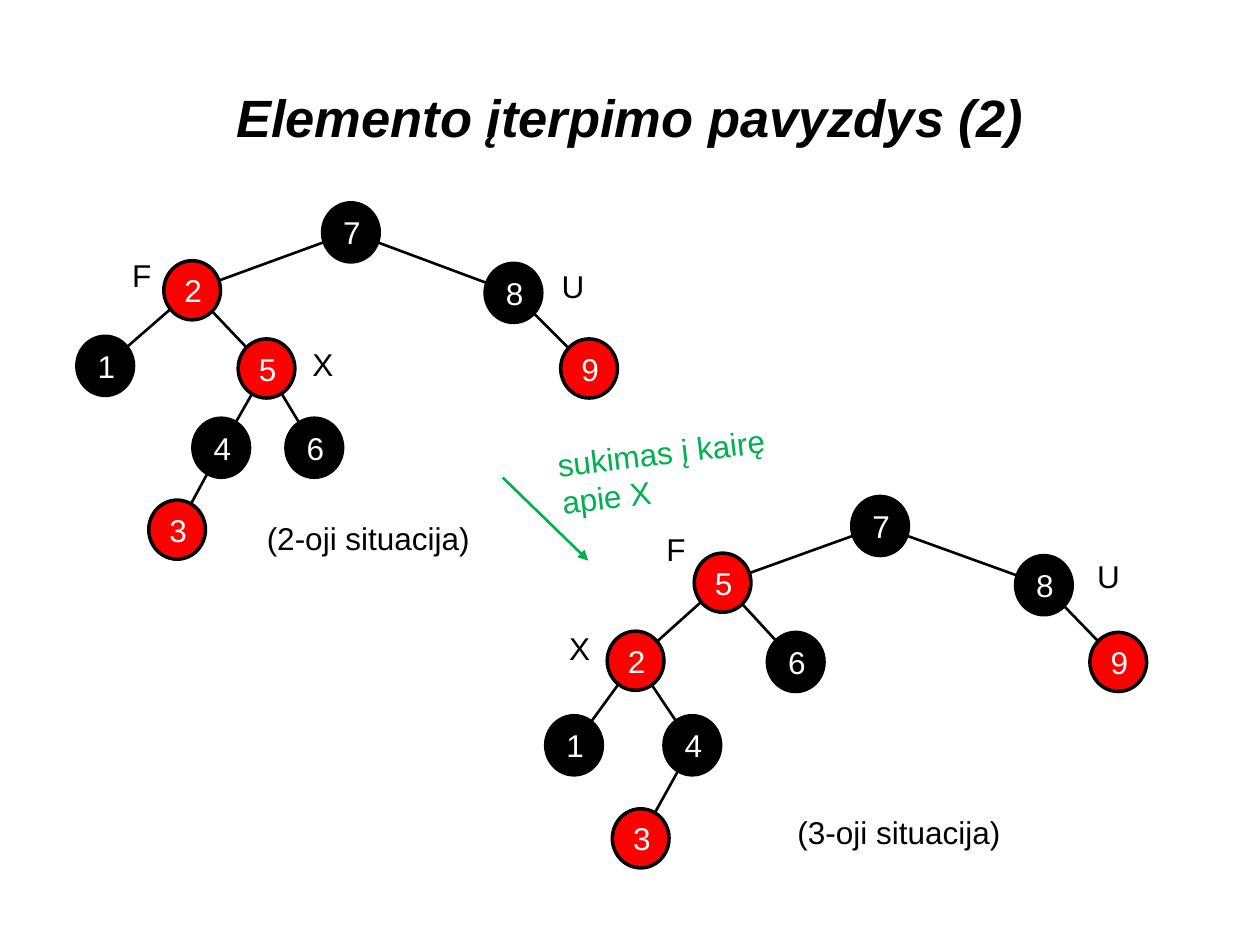
import pptx
import pptx.dml.color
import pptx.enum.shapes
import pptx.enum.text
import pptx.oxml.ns
import pptx.util
from lxml import etree

Pt = pptx.util.Pt
COLORS = {"black": "000000", "red": "FF0000", "white": "FFFFFF", "green": "00B050"}
NODE_WIDTH, NODE_HEIGHT = 32.4, 33.8
TEXT_FORMAT = {"name": "Arial", "size": Pt(18)}
TITLE_FORMAT = {"name": "Arial", "size": Pt(30), "bold": True, "italic": True}
CENTER = pptx.enum.text.PP_ALIGN.CENTER
MIDDLE = pptx.enum.text.MSO_ANCHOR.MIDDLE

BEFORE_NODES = {
    7: (184.3, 115.9, "black"), 2: (93.6, 149, "red"), 8: (277.2, 150.5, "black"),
    1: (43.9, 192.2, "black"), 5: (136.1, 193.7, "red"), 9: (320.4, 193.7, "red"),
    4: (110.2, 239, "black"), 6: (163.4, 239, "black"), 3: (85, 285.8, "red"),
}
BEFORE_EDGES = [(7, 2), (7, 8), (2, 1), (2, 5), (8, 9), (5, 4), (5, 6), (4, 3)]
AFTER_NODES = {
    7: (486.7, 283.7, "black"), 5: (396.7, 316.1, "red"), 8: (580.3, 317.5, "black"),
    2: (347, 360.7, "red"), 6: (438.5, 361.4, "black"), 9: (622.8, 361.4, "red"),
    1: (311.8, 409, "black"), 4: (379.4, 409, "black"), 3: (349.9, 462.2, "red"),
}
AFTER_EDGES = [(7, 5), (7, 8), (5, 2), (5, 6), (8, 9), (2, 1), (2, 4), (4, 3)]
LABELS = [
    ("F", 68.4, 142.6, 26.6), ("U", 313.9, 149, 27.4), ("X", 171.4, 193.7, 26.6),
    ("(2-oji situacija)", 145.4, 293, 131.8),
    ("F", 373.7, 299.5, 26.6), ("U", 619.9, 314.6, 27.4), ("X", 318.2, 355.7, 26.6),
    ("(3-oji situacija)", 448.6, 460.8, 131.8),
]


def rgb(color):
    return pptx.dml.color.RGBColor.from_string(COLORS[color])


def format_text(paragraph, values, color):
    for name, value in values.items():
        setattr(paragraph.font, name, value)
    paragraph.font.color.rgb = rgb(color)


def add_title(slide, text):
    title = slide.shapes.title
    title.left, title.top, title.width, title.height = Pt(36), Pt(21.6), Pt(648), Pt(90)
    title.text_frame.text = text
    title.text_frame.vertical_anchor = MIDDLE
    paragraph = title.text_frame.paragraphs[0]
    paragraph.alignment = CENTER
    format_text(paragraph, TITLE_FORMAT, "black")


def add_line(slide, start, end, color="black"):
    line = slide.shapes.add_connector(
        pptx.enum.shapes.MSO_CONNECTOR.STRAIGHT, *map(Pt, start + end))
    line.line.color.rgb = rgb(color)
    line.line.width = Pt(1.5)
    etree.SubElement(line._element.spPr, pptx.oxml.ns.qn("a:effectLst"))
    return line


def add_arrow(slide, start, end, color):
    arrow = add_line(slide, start, end, color)
    etree.SubElement(arrow.line._get_or_add_ln(), pptx.oxml.ns.qn("a:tailEnd"), type="triangle")


def add_node(slide, key, left, top, color):
    node = slide.shapes.add_shape(
        pptx.enum.shapes.MSO_SHAPE.OVAL, Pt(left), Pt(top), Pt(NODE_WIDTH), Pt(NODE_HEIGHT))
    node.shadow.inherit = False
    node.fill.solid()
    node.fill.fore_color.rgb = rgb(color)
    node.line.color.rgb = rgb("black")
    node.line.width = Pt(2)
    node.text_frame.text = str(key)
    node.text_frame.vertical_anchor = MIDDLE
    paragraph = node.text_frame.paragraphs[0]
    paragraph.alignment = CENTER
    format_text(paragraph, TEXT_FORMAT, "white")


def add_tree(slide, nodes, edges):
    centers = {key: (left + NODE_WIDTH / 2, top + NODE_HEIGHT / 2)
               for key, (left, top, color) in nodes.items()}
    for parent, child in edges:
        add_line(slide, centers[parent], centers[child])
    for key, node in nodes.items():
        add_node(slide, key, *node)


def add_label(slide, text, left, top, width, height=28.8, color="black", rotation=0):
    label = slide.shapes.add_textbox(Pt(left), Pt(top), Pt(width), Pt(height))
    label.rotation = rotation
    label.text_frame.text = text
    label.text_frame.word_wrap = False
    label.text_frame.auto_size = pptx.enum.text.MSO_AUTO_SIZE.SHAPE_TO_FIT_TEXT
    for paragraph in label.text_frame.paragraphs:
        format_text(paragraph, TEXT_FORMAT, color)


def main():
    presentation = pptx.Presentation()
    presentation.slide_width, presentation.slide_height = Pt(720), Pt(540)
    slide = presentation.slides.add_slide(presentation.slide_layouts.get_by_name("Title Only"))
    add_title(slide, "Elemento įterpimo pavyzdys (2)")
    add_tree(slide, BEFORE_NODES, BEFORE_EDGES)
    add_tree(slide, AFTER_NODES, AFTER_EDGES)
    for label in LABELS:
        add_label(slide, *label)
    add_arrow(slide, (287.3, 272.9), (336.2, 320.4), "green")
    add_label(slide, "sukimas į kairę\napie X", 312.5, 244.1, 134.6, 51.1, "green", 353.3)
    presentation.save("out.pptx")


if __name__ == "__main__":
    main()
